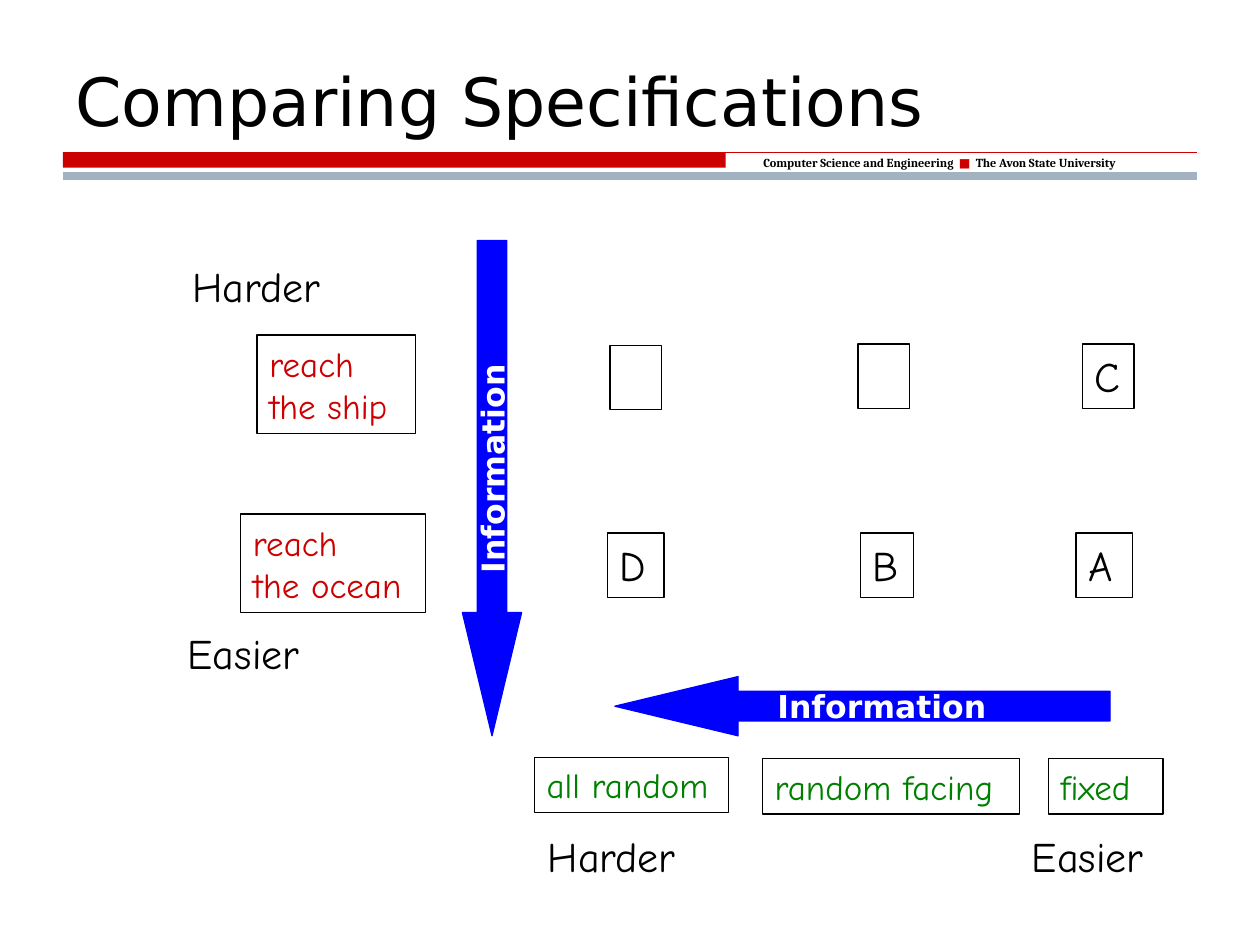
"""Build the slide that compares specifications on two information axes."""
from dataclasses import dataclass

from pptx import Presentation
from pptx import util as u
from pptx.dml.color import RGBColor
from pptx.enum import shapes, text
from pptx.oxml.ns import qn

BLACK = RGBColor(0x00, 0x00, 0x00)
WHITE = RGBColor(0xFF, 0xFF, 0xFF)
RED = RGBColor(0xCC, 0x00, 0x00)
GREEN = RGBColor(0x00, 0x80, 0x00)
BLUE = RGBColor(0x00, 0x00, 0xFF)
STEEL = RGBColor(0xA3, 0xB2, 0xC1)

HAND, SANS, SERIF = "Comic Neue", "DejaVu Sans", "Cambria"
GROWING = {"word_wrap": False, "auto_size": text.MSO_AUTO_SIZE.SHAPE_TO_FIT_TEXT}
BANNER = {**GROWING, "word_wrap": True}
TITLE = {"word_wrap": True, "vertical_anchor": text.MSO_ANCHOR.BOTTOM}
ARROW = {
    "word_wrap": False,
    "vertical_anchor": text.MSO_ANCHOR.MIDDLE,
    "margin_top": u.Inches(0),
    "margin_bottom": u.Inches(0.8),
}


@dataclass(frozen=True)
class Run:
    words: str
    size: float
    color: RGBColor = BLACK
    name: str = HAND
    bold: bool = False


@dataclass(frozen=True)
class Area:
    left: float
    top: float
    width: float
    height: float

    def lengths(self) -> list[int]:
        return [u.Inches(n) for n in (self.left, self.top, self.width, self.height)]


@dataclass(frozen=True)
class Box:
    area: Area
    lines: tuple[str, ...] = ()
    size: float = 24
    color: RGBColor = BLACK


@dataclass(frozen=True)
class InfoArrow:
    area: Area
    rotation: float


def write(frame, paragraphs: list[list[Run]], frame_format: dict) -> None:
    for attribute, value in frame_format.items():
        setattr(frame, attribute, value)
    for index, runs in enumerate(paragraphs):
        paragraph = frame.add_paragraph() if index else frame.paragraphs[0]
        paragraph.alignment = text.PP_ALIGN.LEFT
        for part in runs:
            run = paragraph.add_run()
            run.text = part.words
            font_format = {"size": u.Pt(part.size), "name": part.name, "bold": part.bold}
            for attribute, value in font_format.items():
                setattr(run.font, attribute, value)
            run.font.color.rgb = part.color


def add_label(slide, area: Area, runs: list[Run], frame_format: dict) -> None:
    label = slide.shapes.add_textbox(*area.lengths())
    write(label.text_frame, [runs], frame_format)


def add_box(slide, box: Box) -> None:
    outline = slide.shapes.add_shape(shapes.MSO_SHAPE.RECTANGLE, *box.area.lengths())
    outline.shadow.inherit = False
    outline.fill.background()
    outline.line.color.rgb = BLACK
    outline.line.width = u.Pt(0.75)
    if box.lines:
        paragraphs = [[Run(line, box.size, box.color)] for line in box.lines]
        write(outline.text_frame, paragraphs, GROWING)


def add_arrow(slide, info: InfoArrow) -> None:
    arrow = slide.shapes.add_shape(shapes.MSO_SHAPE.DOWN_ARROW, *info.area.lengths())
    arrow.shadow.inherit = False
    arrow.rotation = info.rotation
    arrow.adjustments[0], arrow.adjustments[1] = 0.5, 2.08
    arrow.fill.solid()
    arrow.fill.fore_color.rgb = BLUE
    arrow.line.color.rgb = BLUE
    arrow.line.width = u.Pt(0.75)
    write(arrow.text_frame, [[Run("Information", 18, WHITE, SANS, True)]], ARROW)
    arrow.text_frame._txBody.find(qn("a:bodyPr")).set("vert", "vert270")


def add_rule(slide, top: float, color: RGBColor, width: float) -> None:
    rule = slide.shapes.add_connector(
        shapes.MSO_CONNECTOR.STRAIGHT,
        u.Inches(0.5), u.Inches(top), u.Inches(9.5), u.Inches(top),
    )
    rule.line.color.rgb = color
    rule.line.width = u.Pt(width)
    properties = rule._element.spPr
    properties.append(properties.makeelement(qn("a:effectLst"), {}))


def add_header(slide) -> None:
    bar = slide.shapes.add_shape(
        shapes.MSO_SHAPE.RECTANGLE, *Area(0.5, 1.21, 5.26, 0.12).lengths()
    )
    bar.shadow.inherit = False
    bar.fill.solid()
    bar.fill.fore_color.rgb = RED
    bar.line.fill.background()
    add_rule(slide, 1.21, RED, 0.75)
    affiliation = [
        Run("Computer Science and Engineering  ", 7, BLACK, SERIF, True),
        Run("■", 7, RED, SANS),
        Run("  The Avon State University", 7, BLACK, SERIF, True),
    ]
    add_label(slide, Area(5.96, 1.18, 3.44, 0.22), affiliation, BANNER)
    add_rule(slide, 1.4, STEEL, 4.5)
    heading = [Run("Comparing Specifications", 38, BLACK, SANS)]
    add_label(slide, Area(0.5, 0.25, 9, 0.91), heading, TITLE)


ARROWS = [
    InfoArrow(Area(6.61, 3.64, 0.47, 3.93), 90),
    InfoArrow(Area(3.67, 1.91, 0.47, 3.93), 0),
]
EFFORTS = [
    Box(Area(1.43, 2.02, 1.32, 0.5), ("Harder",)),
    Box(Area(1.39, 4.93, 1.18, 0.5), ("Easier",)),
    Box(Area(4.25, 6.54, 1.32, 0.5), ("Harder",)),
    Box(Area(8.09, 6.54, 1.18, 0.5), ("Easier",)),
]
BOXES = [
    Box(Area(4.24, 6.01, 1.54, 0.44), ("all random",), 20, GREEN),
    Box(Area(6.05, 6.02, 2.04, 0.44), ("random facing",), 20, GREEN),
    Box(Area(8.32, 6.02, 0.91, 0.44), ("fixed",), 20, GREEN),
    Box(Area(2.04, 2.66, 1.26, 0.78), ("reach", "the ship"), 20, RED),
    Box(Area(1.91, 4.08, 1.47, 0.78), ("reach", "the ocean"), 20, RED),
    Box(Area(4.84, 2.74, 0.41, 0.51)),
    Box(Area(6.81, 2.73, 0.41, 0.51)),
    Box(Area(8.59, 2.73, 0.41, 0.51), ("C",)),
    Box(Area(4.82, 4.23, 0.45, 0.51), ("D",)),
    Box(Area(6.83, 4.23, 0.42, 0.51), ("B",)),
    Box(Area(8.54, 4.23, 0.45, 0.51), ("A",)),
]


def main() -> None:
    deck = Presentation()
    deck.slide_width, deck.slide_height = u.Inches(10), u.Inches(7.5)
    slide = deck.slides.add_slide(deck.slide_layouts[6])
    add_header(slide)
    for info in ARROWS:
        add_arrow(slide, info)
    for effort in EFFORTS:
        add_label(slide, effort.area, [Run(effort.lines[0], effort.size)], GROWING)
    for box in BOXES:
        add_box(slide, box)
    deck.save("out.pptx")


if __name__ == "__main__":
    main()
